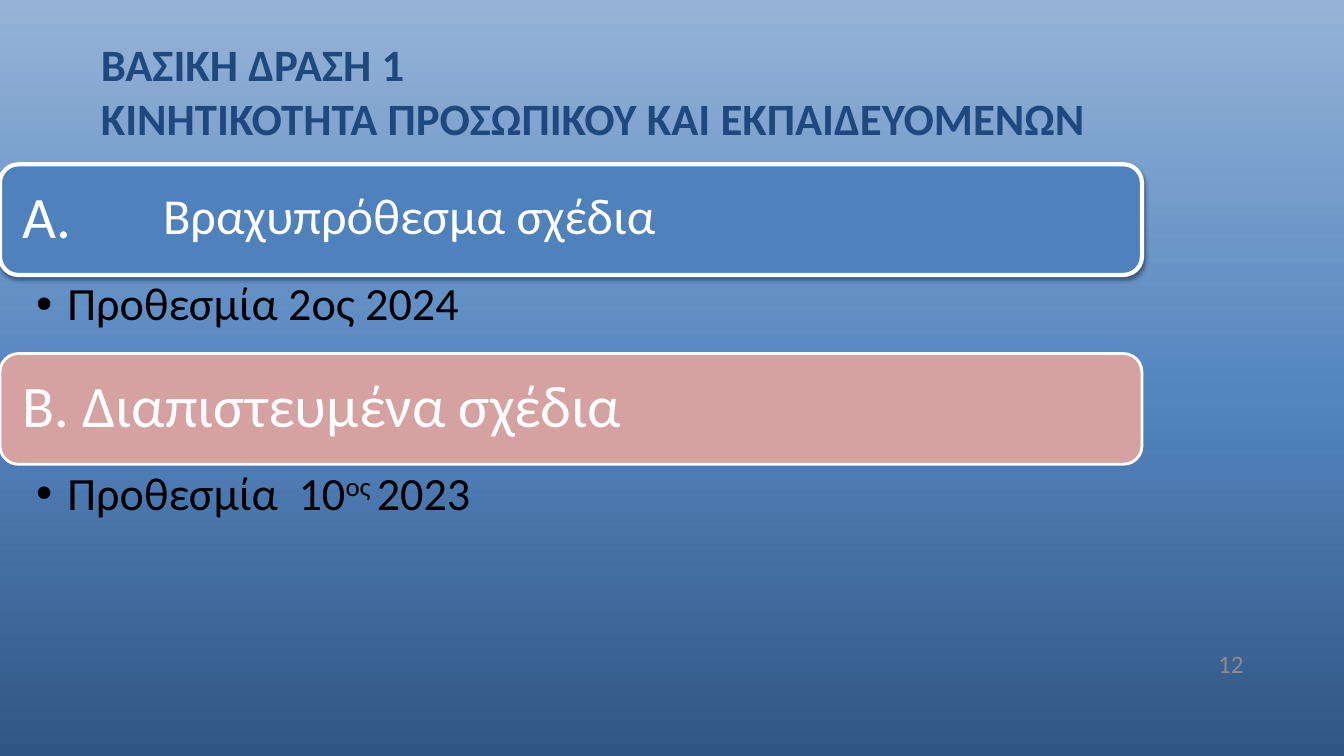
from copy import deepcopy
from dataclasses import dataclass

from lxml.etree import SubElement
from pptx import Presentation
from pptx.dml.color import RGBColor
from pptx.enum.shapes import MSO_SHAPE
from pptx.enum.text import MSO_ANCHOR as Anchor, MSO_AUTO_SIZE as AutoSize, PP_ALIGN as Align
from pptx.oxml.ns import qn
from pptx.util import Cm, Pt


@dataclass(frozen=True)
class Theme:
    font: str = "Calibri"
    title: str = "1F497D"
    light: str = "FFFFFF"
    dark: str = "000000"
    muted: str = "8C8C8C"
    short_term: str = "4F81BD"
    accredited: str = "D6A2A1"
    background: tuple = ((0, "315683"), (0.48, "5485BF"), (1, "95B3D7"))
    title_size: int = 32
    band_size: int = 42
    label_size: int = 36
    list_size: int = 33
    number_size: int = 18


THEME = Theme()
TWO_CONTENT_LAYOUT = 3
BAND_WIDTH, BAND_HEIGHT, LIST_HEIGHT = 28.78, 2.79, 1.93
FIRST_BAND_TOP, SECTION_PITCH = 4.14, 4.77


def rgb(value):
    return RGBColor.from_string(value)


def place(shape, left, top, width, height):
    shape.left, shape.top = Cm(left), Cm(top)
    shape.width, shape.height = Cm(width), Cm(height)


def style_paragraph(paragraph, size, color, bold=False, align=Align.LEFT):
    paragraph.alignment = align
    font = paragraph.font
    font.name, font.size, font.bold = THEME.font, Pt(size), bold
    font.color.rgb = rgb(color)


def set_frame(frame, anchor, margins=(0, 0, 0, 0)):
    """Fix the frame's size, anchor and left, top, right, bottom margins."""
    frame.word_wrap = True
    frame.auto_size = AutoSize.NONE
    frame.vertical_anchor = anchor
    (frame.margin_left, frame.margin_top,
     frame.margin_right, frame.margin_bottom) = map(Cm, margins)


def fill_background(slide):
    fill = slide.background.fill
    fill.gradient()
    fill.gradient_angle = 90
    stop_list = slide.element.xpath("./p:cSld/p:bg//a:gsLst")[0]
    stop_list.insert(1, deepcopy(stop_list[0]))
    for stop, (position, color) in zip(fill.gradient_stops, THEME.background):
        stop.position = position
        stop.color.rgb = rgb(color)


def add_title(slide, text):
    title = slide.shapes.title
    place(title, 2.54, 0.74, 28.78, 3.07)
    set_frame(title.text_frame, Anchor.MIDDLE)
    title.text_frame.text = text
    style_paragraph(title.text_frame.paragraphs[0], THEME.title_size, THEME.title, bold=True)


def add_soft_shadow(shape):
    effects = shape.element.spPr.find(qn("a:effectLst"))
    shadow = SubElement(effects, qn("a:outerShdw"), blurRad=str(Pt(3.1)), dist=str(Pt(1.6)),
                        dir="5400000", rotWithShape="0")
    color = SubElement(shadow, qn("a:srgbClr"), val=THEME.dark)
    SubElement(color, qn("a:alpha"), val="38000")


def add_band(slide, top, text, color, line_width):
    band = slide.shapes.add_shape(MSO_SHAPE.ROUNDED_RECTANGLE, 0, Cm(top),
                                  Cm(BAND_WIDTH), Cm(BAND_HEIGHT))
    band.fill.solid()
    band.fill.fore_color.rgb = rgb(color)
    band.line.color.rgb = rgb(THEME.light)
    band.line.width = Pt(line_width)
    band.shadow.inherit = False
    set_frame(band.text_frame, Anchor.MIDDLE, (0.43, 0.43, 0.43, 0.43))
    band.text_frame.text = text
    paragraph = band.text_frame.paragraphs[0]
    paragraph.line_spacing = 0.9
    style_paragraph(paragraph, THEME.band_size, THEME.light)
    return band


def fill_list(placeholder, top, runs):
    """Write one bullet from (text, is_superscript) pairs."""
    place(placeholder, 0, top, BAND_WIDTH, LIST_HEIGHT)
    set_frame(placeholder.text_frame, Anchor.TOP, (0.91, 0.15, 0.84, 0.15))
    paragraph = placeholder.text_frame.paragraphs[0]
    properties = paragraph._p.get_or_add_pPr()
    properties.set("marL", str(Cm(0.79)))
    properties.set("indent", str(-Cm(0.79)))
    paragraph.line_spacing = 0.9
    paragraph.space_before = Pt(0)
    SubElement(properties, qn("a:buChar"), char="•")
    style_paragraph(paragraph, THEME.list_size, THEME.dark)
    for text, is_superscript in runs:
        run = paragraph.add_run()
        run.text = text
        if is_superscript:
            run._r.get_or_add_rPr().set("baseline", "30000")


def add_text(slide, box, text, size, color, margins, align=Align.LEFT):
    left, top, width, height = map(Cm, box)
    frame = slide.shapes.add_textbox(left, top, width, height).text_frame
    set_frame(frame, Anchor.TOP, margins)
    frame.text = text
    style_paragraph(frame.paragraphs[0], size, color, align=align)


def main():
    presentation = Presentation()
    presentation.slide_width, presentation.slide_height = Cm(33.87), Cm(19.05)
    slide = presentation.slides.add_slide(presentation.slide_layouts[TWO_CONTENT_LAYOUT])
    fill_background(slide)
    add_title(slide, "ΒΑΣΙΚΗ ΔΡΑΣΗ 1\vΚΙΝΗΤΙΚΟΤΗΤΑ ΠΡΟΣΩΠΙΚΟΥ ΚΑΙ ΕΚΠΑΙΔΕΥΟΜΕΝΩΝ")

    sections = (
        ("A.", THEME.short_term, 3, (("Προθεσμία 2ος 2024", False),)),
        ("B. Διαπιστευμένα σχέδια", THEME.accredited, 2,
         (("Προθεσμία  10", False), ("ος ", True), ("2023", False))),
    )
    bands = []
    for index, (heading, color, line_width, deadline) in enumerate(sections):
        top = FIRST_BAND_TOP + index * SECTION_PITCH
        bands.append(add_band(slide, top, heading, color, line_width))
        fill_list(slide.placeholders[index + 1], top + BAND_HEIGHT, deadline)
    add_soft_shadow(bands[0])

    add_text(slide, (3.86, 4.5, 16.94, 1.8), "Βραχυπρόθεσμα σχέδια",
             THEME.label_size, THEME.light, (0.25, 0.13, 0.25, 0.13))
    add_text(slide, (29.21, 16.33, 2.13, 1.02), "12",
             THEME.number_size, THEME.muted, (0, 0, 0, 0), Align.RIGHT)
    presentation.save("out.pptx")


if __name__ == "__main__":
    main()
